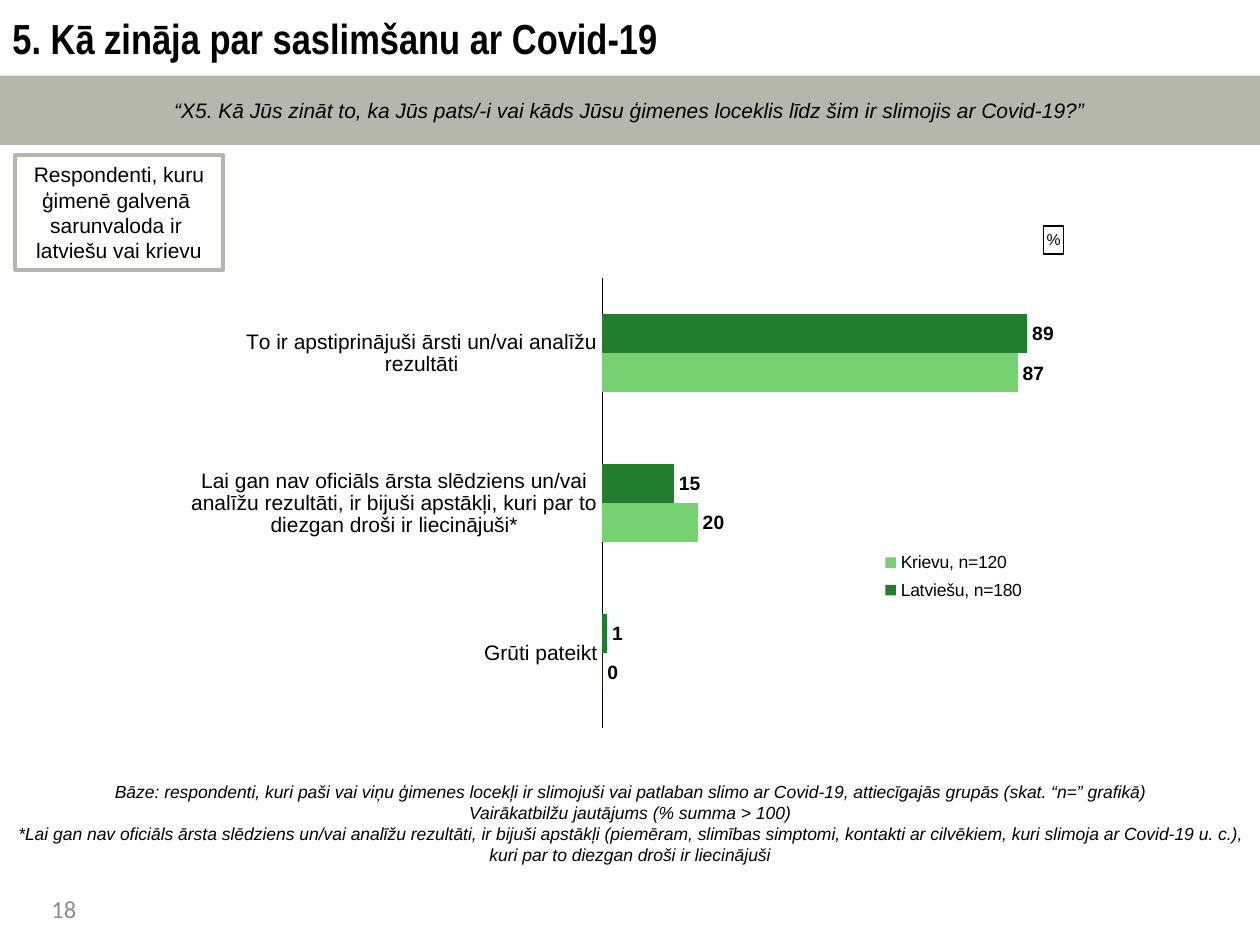
from dataclasses import dataclass
from typing import Any

from lxml.etree import SubElement
from pptx import Presentation
from pptx.chart.data import CategoryChartData
from pptx.dml.color import RGBColor
from pptx.enum.chart import (XL_CHART_TYPE, XL_LABEL_POSITION,
                             XL_LEGEND_POSITION, XL_TICK_MARK)
from pptx.enum.shapes import MSO_SHAPE
from pptx.enum.text import MSO_ANCHOR, PP_ALIGN
from pptx.oxml.ns import qn
from pptx.util import Inches, Pt


@dataclass(frozen=True)
class Theme:
    sans: str = "Arial"
    narrow: str = "Arial Narrow"
    plain: str = "Calibri"
    ink: str = "000000"
    band: str = "B5B7AD"
    mute: str = "8C8C8C"
    head: int = 24
    page: int = 14
    body: int = 12
    value: int = 11
    note: int = 10
    unit: int = 9


THEME = Theme()


@dataclass(frozen=True)
class Block:
    box: tuple[float, float, float, float]
    lines: tuple[str, ...]
    size: int
    face: str = THEME.sans
    ink: str = THEME.ink
    bold: bool = False
    slant: bool = False
    align: PP_ALIGN = PP_ALIGN.CENTER
    fill: str | None = None
    edge: str | None = None


@dataclass(frozen=True)
class Series:
    name: str
    values: tuple[int, ...]
    fill: str


BLOCKS = (
    Block((0.31, 7.01, 1.06, 0.4), ("18",), THEME.page, THEME.plain,
          THEME.mute, align=PP_ALIGN.LEFT),
    Block((0, 0, 10, 0.6), ("5. Kā zināja par saslimšanu ar Covid-19",),
          THEME.head, THEME.narrow, bold=True, align=PP_ALIGN.LEFT),
    Block((0, 0.6, 10, 0.55),
          ("“X5. Kā Jūs zināt to, ka Jūs pats/-i vai kāds Jūsu ģimenes "
           "loceklis līdz šim ir slimojis ar Covid-19?”",),
          THEME.body, slant=True, fill=THEME.band),
    Block((0, 6.3, 10, 0.47),
          ("Bāze: respondenti, kuri paši vai viņu ģimenes locekļi ir slimojuši "
           "vai patlaban slimo ar Covid-19, attiecīgajās grupās "
           "(skat. “n=” grafikā)",
           "Vairākatbilžu jautājums (% summa > 100)",
           "*Lai gan nav oficiāls ārsta slēdziens un/vai analīžu rezultāti, ir "
           "bijuši apstākļi (piemēram, slimības simptomi, kontakti ar "
           "cilvēkiem, kuri slimoja ar Covid-19 u. c.), kuri par to diezgan "
           "droši ir liecinājuši"),
          THEME.note, slant=True),
    Block((0.12, 1.23, 1.65, 0.91),
          ("Respondenti, kuru ģimenē galvenā ", "sarunvaloda ir ",
           "latviešu vai krievu"),
          THEME.body, edge=THEME.band),
)

ANSWERS = (
    "To ir apstiprinājuši ārsti un/vai analīžu rezultāti",
    "Lai gan nav oficiāls ārsta slēdziens un/vai analīžu rezultāti, ir bijuši "
    "apstākļi, kuri par to diezgan droši ir liecinājuši*",
    "Grūti pateikt",
)
GROUPS = (
    Series("Latviešu, n=180", (89, 15, 1), "237D2E"),
    Series("Krievu, n=120", (87, 20, 0), "76D171"),
)


def color(code: str) -> RGBColor:
    return RGBColor.from_string(code)


def style(font: Any, size: int, face: str = THEME.sans, ink: str = THEME.ink,
          bold: bool = False, slant: bool = False) -> None:
    font.size, font.name = Pt(size), face
    font.bold, font.italic = bold, slant
    font.color.rgb = color(ink)


def add_block(slide: Any, block: Block) -> None:
    box = [Inches(n) for n in block.box]
    if block.fill or block.edge:
        shape = slide.shapes.add_shape(MSO_SHAPE.RECTANGLE, *box)
        shape.shadow.inherit = False
    else:
        shape = slide.shapes.add_textbox(*box)
    if block.fill:
        shape.fill.solid()
        shape.fill.fore_color.rgb = color(block.fill)
    else:
        shape.fill.background()
    if block.edge:
        shape.line.color.rgb = color(block.edge)
        shape.line.width = Pt(2.25)
    else:
        shape.line.fill.background()
    frame = shape.text_frame
    frame.text = "\n".join(block.lines)
    frame.word_wrap = True
    frame.vertical_anchor = MSO_ANCHOR.MIDDLE
    for para in frame.paragraphs:
        para.alignment = block.align
        for run in para.runs:
            style(run.font, block.size, block.face, block.ink,
                  block.bold, block.slant)


def place(part: Any, index: int, inner: bool = False, **spots: float) -> None:
    """Give a chart part a manual layout in fractions of the chart."""
    old = part.find(qn("c:layout"))
    if old is not None:
        part.remove(old)
    layout = SubElement(part, qn("c:layout"))
    part.insert(index, layout)
    manual = SubElement(layout, qn("c:manualLayout"))
    if inner:
        SubElement(manual, qn("c:layoutTarget")).set("val", "inner")
    for key in ("x", "y"):
        SubElement(manual, qn(f"c:{key}Mode")).set("val", "edge")
    for key, spot in spots.items():
        SubElement(manual, qn(f"c:{key}")).set("val", str(spot))


def add_bars(slide: Any) -> None:
    data = CategoryChartData(number_format="0")
    data.categories = ANSWERS
    for group in GROUPS:
        data.add_series(group.name, group.values)
    box = [Inches(n) for n in (1.42, 1.67, 7.15, 4.15)]
    chart = slide.shapes.add_chart(XL_CHART_TYPE.BAR_CLUSTERED, *box, data).chart
    style(chart.font, THEME.unit)

    chart.has_title = True
    title = chart.chart_title
    title.text_frame.text = "%"
    style(title.text_frame.paragraphs[0].runs[0].font, THEME.unit)
    title.format.line.color.rgb = color(THEME.ink)
    title.format.line.width = Pt(0.75)

    chart.has_legend = True
    chart.legend.position = XL_LEGEND_POSITION.TOP
    chart.legend.include_in_layout = False
    style(chart.legend.font, THEME.note)

    names = chart.category_axis
    names.reverse_order = True
    names.major_tick_mark = names.minor_tick_mark = XL_TICK_MARK.NONE
    names.format.line.color.rgb = color(THEME.ink)
    names.format.line.width = Pt(0.75)
    style(names.tick_labels.font, THEME.body)
    scale = chart.value_axis
    scale.minimum_scale, scale.maximum_scale = 0, 100
    scale.has_major_gridlines = False
    scale.visible = False

    plot = chart.plots[0]
    plot.gap_width, plot.overlap = 182, 0
    plot.vary_by_categories = False
    for bars, group in zip(plot.series, GROUPS):
        bars.format.fill.solid()
        bars.format.fill.fore_color.rgb = color(group.fill)
        labels = bars.data_labels
        labels.show_value = True
        labels.position = XL_LABEL_POSITION.OUTSIDE_END
        style(labels.font, THEME.value, bold=True)

    root = chart.element.find(qn("c:chart"))
    place(root.find(qn("c:title")), 1, x=0.96, y=0.03)
    place(root.find(qn("c:legend")), 1, x=0.75, y=0.64, w=0.22, h=0.12)
    place(root.find(qn("c:plotArea")), 0, inner=True,
          x=0.47, y=0.13, w=0.53, h=0.86)


def main() -> None:
    deck = Presentation()
    deck.slide_width, deck.slide_height = Inches(10), Inches(7.5)
    slide = deck.slides.add_slide(deck.slide_layouts[6])
    for block in BLOCKS[:-1]:
        add_block(slide, block)
    add_bars(slide)
    add_block(slide, BLOCKS[-1])
    deck.save("out.pptx")


if __name__ == "__main__":
    main()
